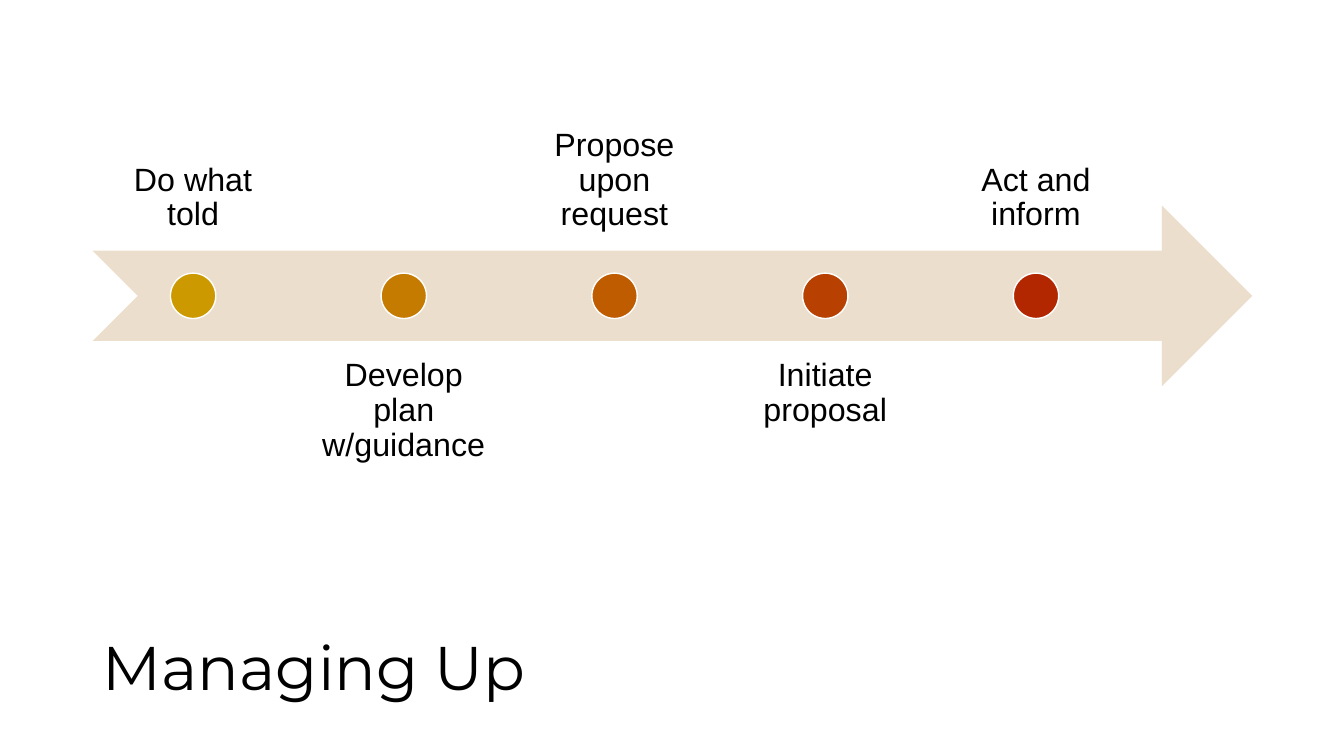
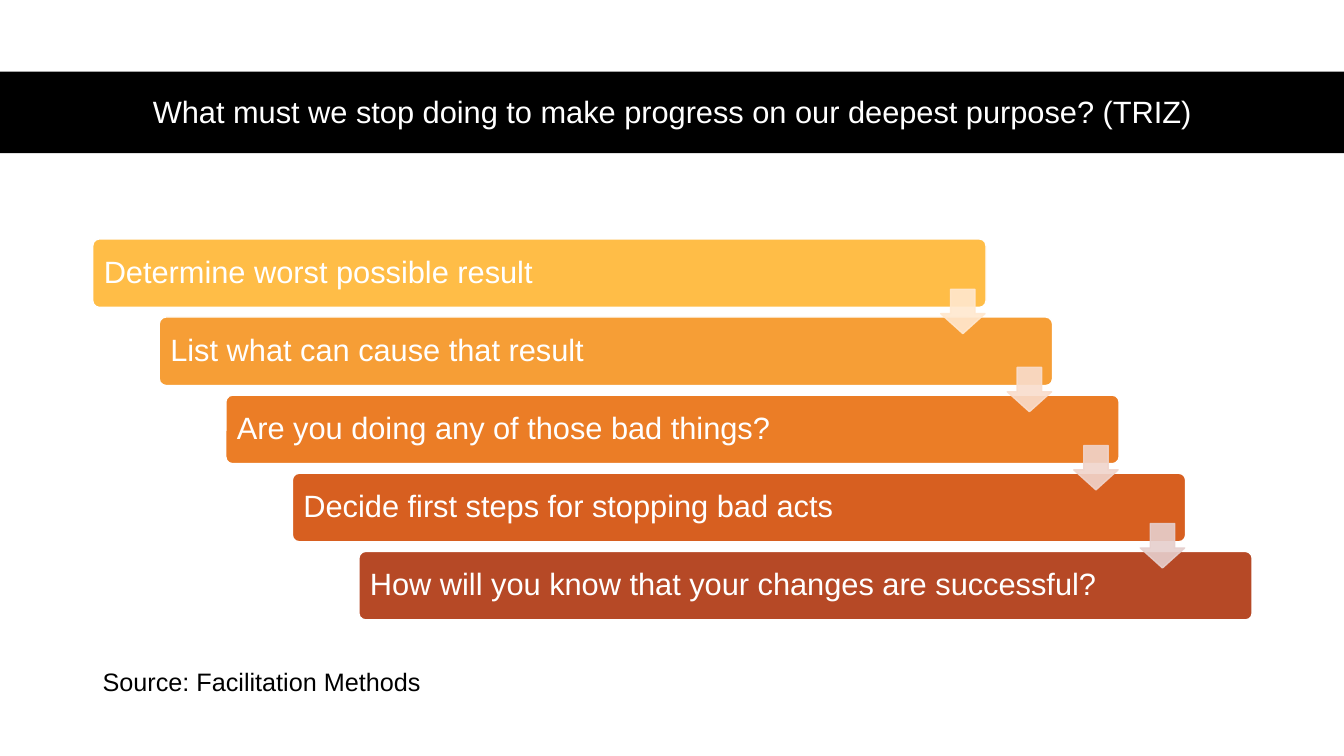
"""Build two slides: a managing-up timeline and a TRIZ question staircase."""
from typing import NamedTuple, Optional

from lxml.etree import SubElement
from pptx import Presentation
from pptx.dml.color import RGBColor
from pptx.enum.shapes import MSO_SHAPE as Shape
from pptx.enum.text import MSO_ANCHOR as Anchor, PP_ALIGN as Align
from pptx.oxml.ns import qn
from pptx.util import Inches, Pt

BLACK = RGBColor(0x00, 0x00, 0x00)
WHITE = RGBColor(0xFF, 0xFF, 0xFF)
SAND = RGBColor(0xEC, 0xDE, 0xCC)
BODY_FONT = "Arial"
TITLE_FONT = "Montserrat"
MARGIN = 0.92
CONTENT_WIDTH = 11.5
MILESTONE_PITCH = 2.09
DOT_SIZE = 0.45
LABEL_WIDTH, LABEL_HEIGHT = 1.99, 1.79
STAIRCASE_DROP = 3.1
STEP_RIGHT = 0.66
ARROW_SIZE = 0.44
ARROW_OPACITY = 90


class Area(NamedTuple):
    """A rectangle in inches."""
    left: float
    top: float
    width: float
    height: float


class Style(NamedTuple):
    """The look of a block of text."""
    size: float
    color: RGBColor = BLACK
    font: str = BODY_FONT
    align: Align = Align.LEFT
    anchor: Anchor = Anchor.MIDDLE
    spacing: float = 0.9
    side_inset: float = 0.1
    end_inset: float = 0.05
    wrap: bool = True


class Milestone(NamedTuple):
    """A dot on the timeline with its label."""
    label: str
    color: RGBColor


class Step(NamedTuple):
    """A bar of the staircase and the arrow leading on from it."""
    question: str
    color: RGBColor
    arrow_color: Optional[RGBColor] = None


MILESTONES = [
    Milestone("Do what told", RGBColor(0xCC, 0x99, 0x00)),
    Milestone("Develop plan w/guidance", RGBColor(0xC5, 0x7A, 0x00)),
    Milestone("Propose upon request", RGBColor(0xBF, 0x5C, 0x00)),
    Milestone("Initiate proposal", RGBColor(0xB8, 0x40, 0x00)),
    Milestone("Act and inform", RGBColor(0xB2, 0x26, 0x00)),
]
STEPS = [
    Step("Determine worst possible result",
         RGBColor(0xFF, 0xBD, 0x47), RGBColor(0xFF, 0xE8, 0xCF)),
    Step("List what can cause that result",
         RGBColor(0xF6, 0x9E, 0x36), RGBColor(0xF9, 0xDD, 0xCC)),
    Step("Are you doing any of those bad things?",
         RGBColor(0xEB, 0x7D, 0x26), RGBColor(0xF0, 0xD4, 0xCB)),
    Step("Decide first steps for stopping bad acts",
         RGBColor(0xD7, 0x5F, 0x20), RGBColor(0xE6, 0xCF, 0xCD)),
    Step("How will you know that your changes are successful?",
         RGBColor(0xB6, 0x49, 0x26)),
]
STEP_DOWN = STAIRCASE_DROP / (len(STEPS) - 1)
TITLE = Style(44, font=TITLE_FONT)
BANNER = Style(22, WHITE, align=Align.CENTER)
QUESTION = Style(22, WHITE, side_inset=0.09)
LABEL_ABOVE = Style(23, align=Align.CENTER, anchor=Anchor.BOTTOM,
                    side_inset=0.18, end_inset=0.18)
LABEL_BELOW = LABEL_ABOVE._replace(anchor=Anchor.TOP)
SOURCE = Style(18, anchor=Anchor.TOP, spacing=1.0, wrap=False)


def write(shape, text: str, style: Style) -> None:
    """Set the text of a shape and format it."""
    frame = shape.text_frame
    frame.text = text
    frame.word_wrap = style.wrap
    frame.vertical_anchor = style.anchor
    frame.margin_left = frame.margin_right = Inches(style.side_inset)
    frame.margin_top = frame.margin_bottom = Inches(style.end_inset)
    para = frame.paragraphs[0]
    para.alignment = style.align
    para.line_spacing = style.spacing
    font = para.runs[0].font
    font.name = style.font
    font.size = Pt(style.size)
    font.color.rgb = style.color


def add_text(page, area: Area, text: str, style: Style) -> None:
    """Add a formatted text box."""
    box = page.shapes.add_textbox(*(Inches(length) for length in area))
    write(box, text, style)


def add_shape(page, kind: Shape, area: Area, fill: RGBColor,
              line: Optional[RGBColor] = None):
    """Add a flat preset shape with an optional one-point outline."""
    shape = page.shapes.add_shape(kind, *(Inches(length) for length in area))
    shape.shadow.inherit = False
    shape.fill.solid()
    shape.fill.fore_color.rgb = fill
    if line is None:
        shape.line.fill.background()
    else:
        shape.line.color.rgb = line
        shape.line.width = Pt(1)
    return shape


def set_opacity(shape, percent: int) -> None:
    """Make the fill and outline of a shape partly transparent."""
    for color in shape.element.spPr.iter(qn("a:srgbClr")):
        SubElement(color, qn("a:alpha")).set("val", str(percent * 1000))


def add_milestone(page, index: int, milestone: Milestone) -> None:
    """Add a dot, with its label above or below in turn."""
    left = MARGIN + index * MILESTONE_PITCH
    above = index % 2 == 0
    add_text(page, Area(left, 0.7 if above else 3.38, LABEL_WIDTH, LABEL_HEIGHT),
             milestone.label, LABEL_ABOVE if above else LABEL_BELOW)
    dot_left = left + (LABEL_WIDTH - DOT_SIZE) / 2
    add_shape(page, Shape.OVAL, Area(dot_left, 2.71, DOT_SIZE, DOT_SIZE),
              milestone.color, WHITE)


def add_bar(page, index: int, step: Step) -> None:
    """Add one bar of the staircase."""
    area = Area(MARGIN + index * STEP_RIGHT, 2.37 + index * STEP_DOWN, 8.86, 0.68)
    bar = add_shape(page, Shape.ROUNDED_RECTANGLE, area, step.color, WHITE)
    bar.adjustments[0] = 0.1
    write(bar, step.question, QUESTION)


def add_step_arrow(page, index: int, color: RGBColor) -> None:
    """Add the arrow from one bar to the next."""
    area = Area(9.33 + index * STEP_RIGHT, 2.87 + index * STEP_DOWN,
                ARROW_SIZE, ARROW_SIZE)
    arrow = add_shape(page, Shape.DOWN_ARROW, area, color, color)
    arrow.adjustments[0] = 0.55
    arrow.adjustments[1] = 0.45
    set_opacity(arrow, ARROW_OPACITY)


def build_timeline(page) -> None:
    """Draw the managing-up timeline."""
    add_text(page, Area(MARGIN, 6.05, 8.83, 1.2), "Managing Up", TITLE)
    add_shape(page, Shape.NOTCHED_RIGHT_ARROW,
              Area(MARGIN, 2.04, CONTENT_WIDTH, 1.79), SAND)
    for index, milestone in enumerate(MILESTONES):
        add_milestone(page, index, milestone)


def build_staircase(page) -> None:
    """Draw the TRIZ staircase."""
    add_shape(page, Shape.RECTANGLE, Area(0, 0.71, 13.33, 0.81), BLACK)
    add_text(page, Area(MARGIN, 0.74, CONTENT_WIDTH, 0.78),
             "What must we stop doing to make progress on our deepest purpose? (TRIZ)",
             BANNER)
    for index, step in enumerate(STEPS):
        add_bar(page, index, step)
    for index, step in enumerate(STEPS):
        if step.arrow_color is not None:
            add_step_arrow(page, index, step.arrow_color)
    add_text(page, Area(MARGIN, 6.56, 3.47, 0.4),
             "Source: Facilitation Methods", SOURCE)


def main() -> None:
    """Build and save the deck."""
    deck = Presentation()
    deck.slide_width = Inches(13.33)
    deck.slide_height = Inches(7.5)
    blank = deck.slide_layouts[6]
    for build in (build_timeline, build_staircase):
        build(deck.slides.add_slide(blank))
    deck.save("out.pptx")


if __name__ == "__main__":
    main()
